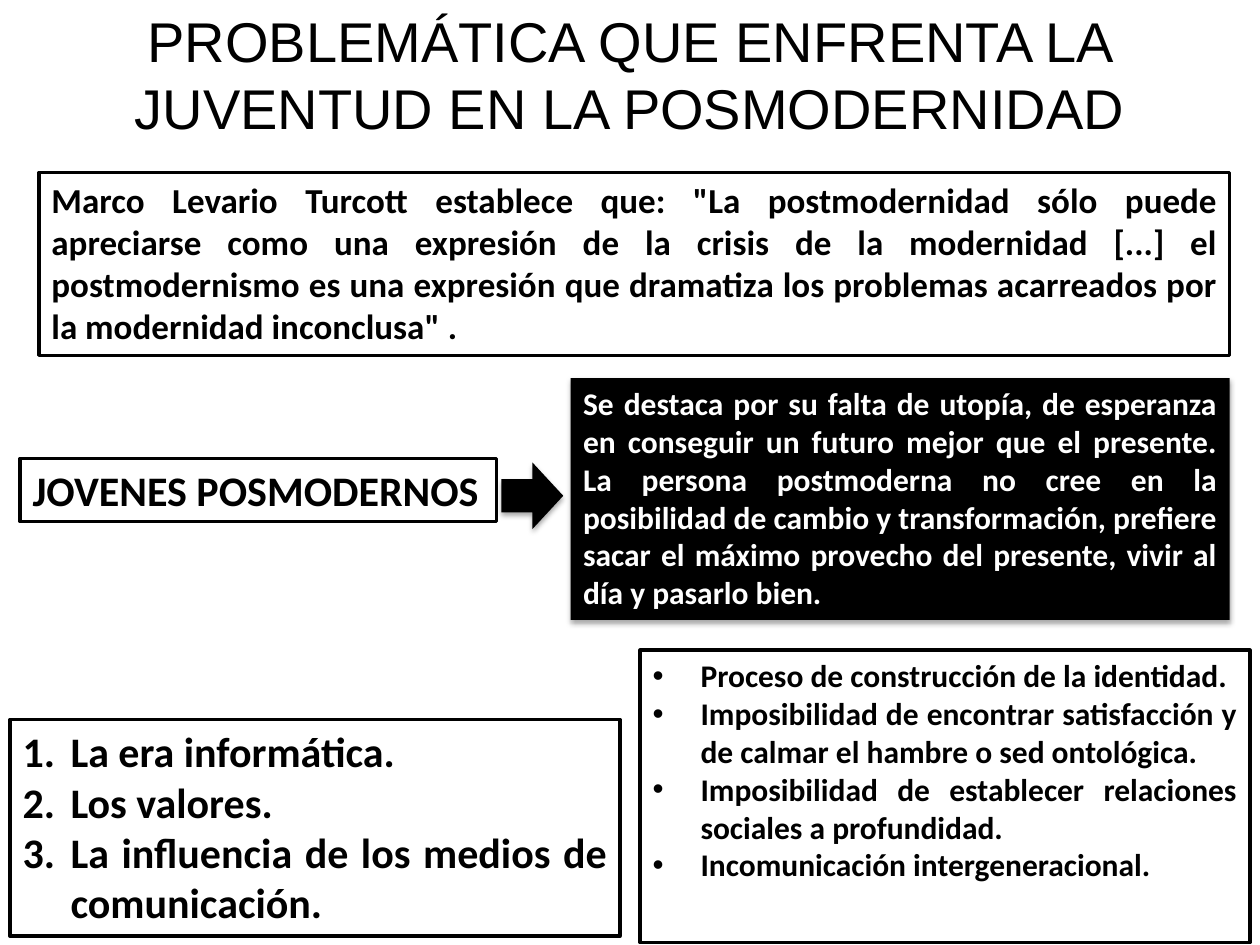
from dataclasses import dataclass

from lxml import etree
from pptx import Presentation
from pptx import util as u
from pptx.dml.color import RGBColor
from pptx.enum import shapes, text
from pptx.oxml.ns import qn


@dataclass(frozen=True)
class Theme:
    ink: RGBColor = RGBColor(0, 0, 0)
    paper: RGBColor = RGBColor(255, 255, 255)
    title_font: str = "Arial"
    body_font: str = "Calibri"
    title_size: int = 32
    large: int = 24
    medium: int = 20
    small: int = 18
    border: int = 2
    list_indent: float = 0.38


class SlideBuilder:
    def __init__(self, slide, theme):
        self.slide = slide
        self.theme = theme

    def place(self, shape, box):
        shape.left, shape.top, shape.width, shape.height = map(u.Inches, box)

    def paint(self, shape, dark=False):
        """Dark shapes carry a soft shadow; light ones carry a border."""
        theme = self.theme
        shape.shadow.inherit = False
        shape.fill.solid()
        shape.fill.fore_color.rgb = theme.ink if dark else theme.paper
        if dark:
            shape.line.fill.background()
            self.add_shadow(shape)
        else:
            shape.line.color.rgb = theme.ink
            shape.line.width = u.Pt(theme.border)

    def add_shadow(self, shape):
        effects = shape.element.spPr.find(qn("a:effectLst"))
        shadow = etree.SubElement(
            effects, qn("a:outerShdw"), blurRad=str(u.Pt(3.1)),
            dist=str(u.Pt(1.8)), dir="5400000", rotWithShape="0")
        color = etree.SubElement(shadow, qn("a:srgbClr"), val=str(self.theme.ink))
        etree.SubElement(color, qn("a:alpha"), val="35000")

    def fill_text(self, shape, lines, size, align, color=None, font=None, bold=True):
        frame = shape.text_frame
        frame.auto_size = text.MSO_AUTO_SIZE.NONE
        frame.word_wrap = True
        frame.vertical_anchor = text.MSO_ANCHOR.TOP
        for index, line in enumerate(lines):
            paragraph = frame.add_paragraph() if index else frame.paragraphs[0]
            paragraph.alignment = align
            paragraph.space_before = u.Pt(0)
            run = paragraph.add_run()
            run.text = line
            run.font.name = font or self.theme.body_font
            run.font.size = u.Pt(size)
            run.font.bold = bold
            run.font.color.rgb = color or self.theme.ink

    def title(self, box, line):
        shape = self.slide.shapes.title
        self.place(shape, box)
        self.fill_text(shape, [line], self.theme.title_size, text.PP_ALIGN.CENTER,
                       font=self.theme.title_font, bold=False)

    def text_box(self, box, line, size, align=text.PP_ALIGN.JUSTIFY,
                 dark=False, wrap=True):
        shape = self.slide.shapes.add_shape(
            shapes.MSO_SHAPE.RECTANGLE, *map(u.Inches, box))
        self.paint(shape, dark)
        self.fill_text(shape, [line], size, align,
                       color=self.theme.paper if dark else None)
        shape.text_frame.word_wrap = wrap

    def arrow(self, box):
        shape = self.slide.shapes.add_shape(
            shapes.MSO_SHAPE.RIGHT_ARROW, *map(u.Inches, box))
        self.paint(shape, dark=True)

    def item_list(self, placeholder_index, box, items, size, numbered=False):
        shape = self.slide.placeholders[placeholder_index]
        self.place(shape, box)
        self.paint(shape)
        self.fill_text(shape, items, size, text.PP_ALIGN.JUSTIFY)
        indent = u.Inches(self.theme.list_indent)
        for paragraph in shape.text_frame.paragraphs:
            properties = paragraph._p.get_or_add_pPr()
            properties.set("marL", str(indent))
            properties.set("indent", str(-indent))
            if numbered:
                etree.SubElement(properties, qn("a:buFont"), typeface="+mj-lt")
                etree.SubElement(properties, qn("a:buAutoNum"), type="arabicPeriod")
            else:
                etree.SubElement(properties, qn("a:buFont"), typeface="Arial")
                etree.SubElement(properties, qn("a:buChar"), char="•")


def main():
    presentation = Presentation()
    presentation.slide_width = u.Inches(10)
    presentation.slide_height = u.Inches(7.5)
    two_content = presentation.slide_layouts[3]
    theme = Theme()
    builder = SlideBuilder(presentation.slides.add_slide(two_content), theme)

    builder.title((0, 0, 10, 1.18),
                  "PROBLEMÁTICA QUE ENFRENTA LA JUVENTUD EN LA POSMODERNIDAD")
    builder.text_box(
        (0.31, 1.37, 9.45, 1.45),
        'Marco Levario Turcott establece que: "La postmodernidad sólo puede '
        "apreciarse como una expresión de la crisis de la modernidad [...] el "
        "postmodernismo es una expresión que dramatiza los problemas acarreados "
        'por la modernidad inconclusa" .',
        theme.medium)
    builder.text_box(
        (4.53, 3, 5.23, 1.92),
        "Se destaca por su falta de utopía, de esperanza en conseguir un futuro "
        "mejor que el presente. La persona postmoderna no cree en la posibilidad "
        "de cambio y transformación, prefiere sacar el máximo provecho del "
        "presente, vivir al día y pasarlo bien.",
        theme.small, dark=True)
    builder.text_box((0.16, 3.64, 3.78, 0.5), "JOVENES POSMODERNOS",
                     theme.large, text.PP_ALIGN.LEFT, wrap=False)
    builder.arrow((3.98, 3.67, 0.49, 0.53))
    builder.item_list(
        1, (0.08, 5.71, 4.84, 1.72),
        ["La era informática.",
         "Los valores.",
         "La influencia de los medios de comunicación."],
        theme.large, numbered=True)
    builder.item_list(
        2, (5.08, 5.16, 4.84, 2.32),
        ["Proceso de construcción de la identidad.",
         "Imposibilidad de encontrar satisfacción y de calmar el hambre o sed "
         "ontológica.",
         "Imposibilidad de establecer relaciones sociales a profundidad.",
         "Incomunicación intergeneracional."],
        theme.small)
    presentation.save("out.pptx")


if __name__ == "__main__":
    main()
